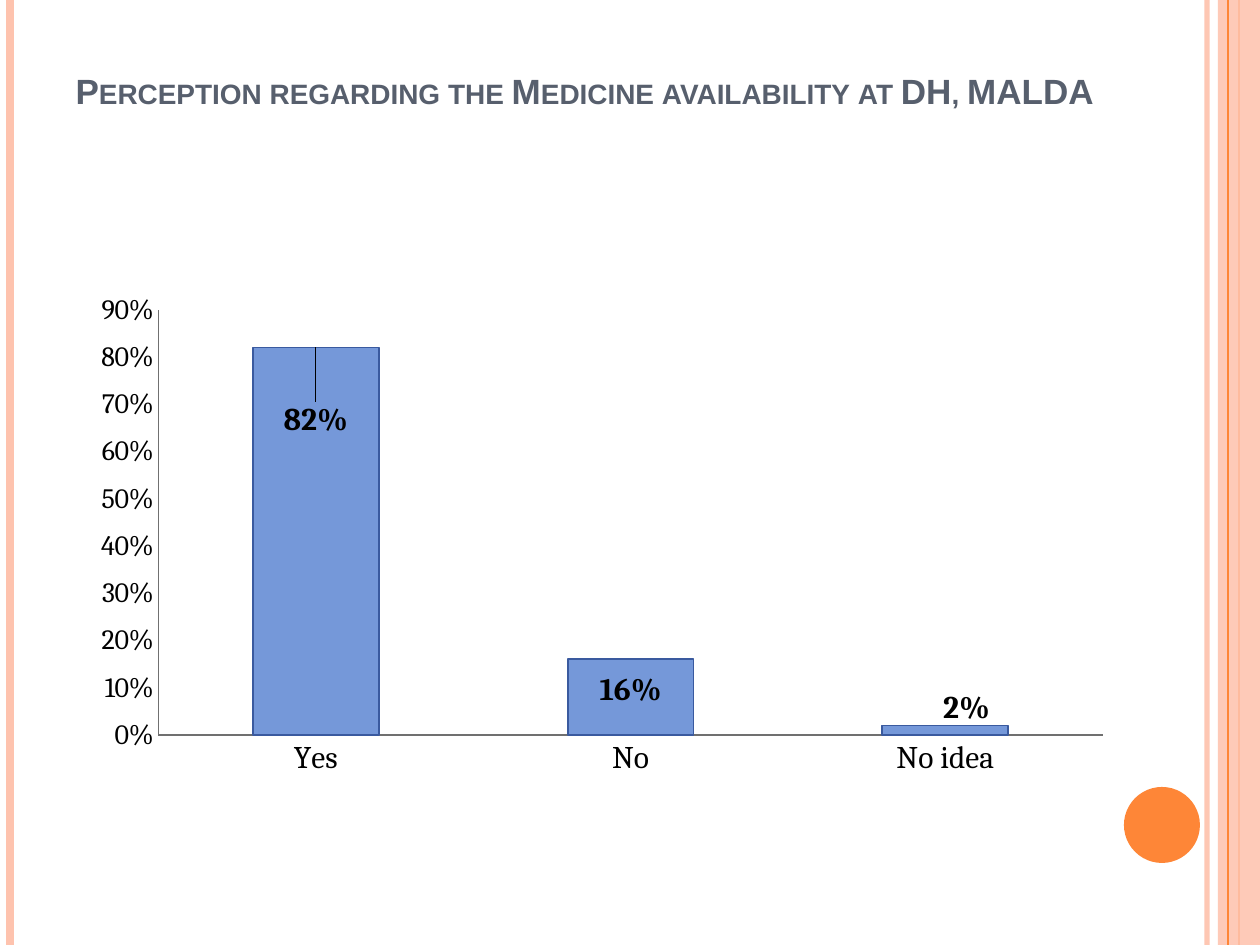
"""Builds a slide with a column chart on medicine availability."""
import dataclasses

import lxml.etree
import pptx
import pptx.chart.data
import pptx.dml.color
import pptx.enum.chart
import pptx.enum.shapes
import pptx.enum.text
import pptx.oxml
import pptx.oxml.ns
import pptx.util

qn = pptx.oxml.ns.qn


@dataclasses.dataclass(frozen=True)
class Theme:
    scale: float = 914400 / 126
    title_font: str = "Arial"
    chart_font: str = "Cambria"
    title_size: int = 20
    label_size: int = 18
    tick_size: int = 16
    title: str = "575F6D"
    text: str = "000000"
    orange: str = "FE8637"
    peach: str = "FEC3AE"
    bar: str = "7598D9"
    bar_edge: str = "3A5A9F"
    axis: str = "707070"


class SlideBuilder:
    def __init__(self, page, theme):
        self.page = page
        self.theme = theme

    def px(self, *lengths):
        return [pptx.util.Emu(round(length * self.theme.scale)) for length in lengths]

    def paint(self, fill, color, alpha=100):
        fill.solid()
        fill.fore_color.rgb = pptx.dml.color.RGBColor.from_string(color)
        if alpha < 100:
            value = fill._xPr.find(".//" + qn("a:srgbClr"))
            lxml.etree.SubElement(value, qn("a:alpha"), val=str(alpha * 1000))

    def style_font(self, font, name, size, color, bold=False):
        font.name = name
        font.size = pptx.util.Pt(size)
        font.bold = bold
        self.paint(font.fill, color)

    def stripe(self, x, color, width, alpha=100):
        line = self.page.shapes.add_connector(
            pptx.enum.shapes.MSO_CONNECTOR.STRAIGHT, *self.px(x, 0, x, 945))
        line.line.width = pptx.util.Pt(width)
        self.paint(line.line.fill, color, alpha)
        lxml.etree.SubElement(line._element.spPr, qn("a:effectLst"))

    def shape(self, kind, bounds, color, alpha=100):
        shape = self.page.shapes.add_shape(kind, *self.px(*bounds))
        shape.shadow.inherit = False
        shape.line.fill.background()
        self.paint(shape.fill, color, alpha)

    def title(self, text, bounds):
        box = self.page.shapes.title
        box.left, box.top, box.width, box.height = self.px(*bounds)
        frame = box.text_frame
        frame.word_wrap = True
        frame.auto_size = pptx.enum.text.MSO_AUTO_SIZE.NONE
        frame.vertical_anchor = pptx.enum.text.MSO_ANCHOR.BOTTOM
        para = frame.paragraphs[0]
        para.alignment = pptx.enum.text.PP_ALIGN.LEFT
        span = para.add_run()
        span.text = text
        self.style_font(span.font, self.theme.title_font, self.theme.title_size,
                        self.theme.title, True)
        span.font._element.set("cap", "small")

    def layout(self, **values):
        layout = pptx.oxml.parse_xml(
            f"<c:layout {pptx.oxml.ns.nsdecls('c')}><c:manualLayout/></c:layout>")
        for name, value in values.items():
            lxml.etree.SubElement(layout[0], qn(f"c:{name}"), val=str(value))
        return layout

    def column_chart(self, bounds, categories, values, label_shifts):
        theme = self.theme
        data = pptx.chart.data.CategoryChartData(number_format="0%")
        data.categories = categories
        data.add_series("Series 1", values)
        chart = self.page.shapes.add_chart(
            pptx.enum.chart.XL_CHART_TYPE.COLUMN_CLUSTERED, *self.px(*bounds), data).chart
        chart.has_title = False
        chart.has_legend = False
        self.style_font(chart.font, theme.chart_font, theme.label_size, theme.text)
        for axis, size in ((chart.category_axis, theme.label_size),
                           (chart.value_axis, theme.tick_size)):
            axis.has_major_gridlines = False
            axis.major_tick_mark = pptx.enum.chart.XL_TICK_MARK.NONE
            axis.minor_tick_mark = pptx.enum.chart.XL_TICK_MARK.NONE
            axis.format.line.width = pptx.util.Pt(0.75)
            self.paint(axis.format.line.fill, theme.axis)
            self.style_font(axis.tick_labels.font, theme.chart_font, size, theme.text)
        scale = chart.value_axis
        scale.minimum_scale, scale.maximum_scale, scale.major_unit = 0, 0.9, 0.1
        scale.tick_labels.number_format = "0%"
        scale.tick_labels.number_format_is_linked = False

        area = chart._chartSpace.chart.plotArea
        for old in area.findall(qn("c:layout")):
            area.remove(old)
        area.insert(0, self.layout(layoutTarget="inner", xMode="edge", yMode="edge",
                                   x=0.09, y=0.15, w=0.89, h=0.71))
        plot = chart.plots[0]
        plot.gap_width = 150
        plot.vary_by_categories = False
        series = plot.series[0]
        self.paint(series.format.fill, theme.bar)
        series.format.line.width = pptx.util.Pt(1)
        self.paint(series.format.line.fill, theme.bar_edge)
        for index, (x, y) in enumerate(label_shifts):
            label = series.points[index].data_label
            self.style_font(label.font, theme.chart_font, theme.label_size, theme.text, True)
            label.position = pptx.enum.chart.XL_LABEL_POSITION.OUTSIDE_END
            element = series._element.findall(".//" + qn("c:dLbl"))[index]
            element.insert(1, self.layout(x=x, y=y))


def main():
    theme = Theme()
    deck = pptx.Presentation()
    deck.slide_width = pptx.util.Inches(10)
    deck.slide_height = pptx.util.Inches(7.5)
    builder = SlideBuilder(deck.slides.add_slide(deck.slide_layouts[5]), theme)
    shapes = pptx.enum.shapes.MSO_SHAPE

    builder.stripe(1207, theme.peach, 3, 93)
    builder.stripe(10, theme.peach, 4.5)
    builder.stripe(1239, theme.orange, 1.5)
    builder.shape(shapes.RECTANGLE, (1218, 0, 42, 945), theme.peach, 87)
    builder.stripe(1228, theme.orange, 0.75)
    builder.shape(shapes.OVAL, (1124, 787, 76, 76), theme.orange)
    builder.column_chart((63, 220, 1061, 599), ("Yes", "No", "No idea"), (0.82, 0.16, 0.02),
                         ((0, 0.16), (0, 0.09), (0.02, 0.01)))
    builder.title("Perception regarding the Medicine availability at DH, MALDA",
                  (63, 63, 1061, 55))
    deck.save("out.pptx")


if __name__ == "__main__":
    main()
